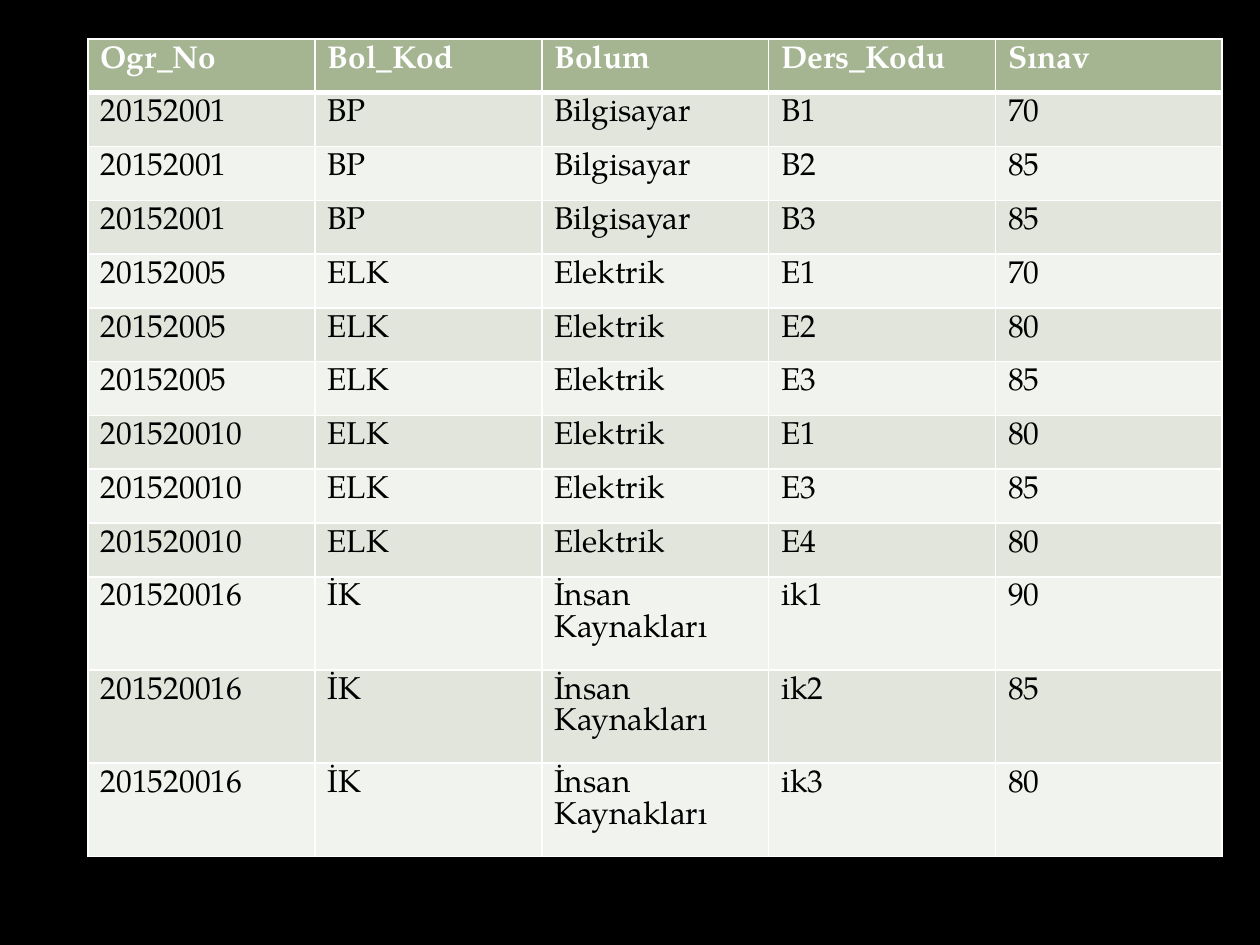
from lxml import etree
from pptx import Presentation
from pptx.dml.color import RGBColor
from pptx.oxml.ns import qn
from pptx.util import Inches, Pt

FONT = "TeX Gyre Pagella"
BLACK, WHITE = "000000", "FFFFFF"
HEADER_GREEN = "A5B592"
BANDS = ("E1E5DC", "F0F3EE")
HEADINGS = ("Ogr_No", "Bol_Kod", "Bolum", "Ders_Kodu", "Sınav")
STUDENTS = (
    ("20152001", "BP", "Bilgisayar", (("B1", 70), ("B2", 85), ("B3", 85))),
    ("20152005", "ELK", "Elektrik", (("E1", 70), ("E2", 80), ("E3", 85))),
    ("201520010", "ELK", "Elektrik", (("E1", 80), ("E3", 85), ("E4", 80))),
    ("201520016", "İK", "İnsan Kaynakları",
     (("ik1", 90), ("ik2", 85), ("ik3", 80))),
)


def paint(fill, color):
    fill.solid()
    fill.fore_color.rgb = RGBColor.from_string(color)


def write(frame, text, size=18, color=BLACK, bold=False):
    run = frame.paragraphs[0].add_run()
    run.text = text
    run.font.name = FONT
    run.font.size = Pt(size)
    run.font.bold = bold
    run.font.color.rgb = RGBColor.from_string(color)


def set_borders(cell, color, **widths):
    properties = cell._tc.get_or_add_tcPr()
    for index, (side, width) in enumerate(widths.items()):
        border = etree.Element(qn(f"a:ln{side}"), w=str(Pt(width)))
        solid = etree.SubElement(border, qn("a:solidFill"))
        etree.SubElement(solid, qn("a:srgbClr"), val=color)
        properties.insert(index, border)


def add_grades(slide, left, top, width, height):
    records = [
        (number, code, department, course, str(grade))
        for number, code, department, results in STUDENTS
        for course, grade in results
    ]
    rows = [HEADINGS, *records]
    grades = slide.shapes.add_table(
        len(rows), len(HEADINGS), left, top, width, height).table
    tall_count = sum(" " in values[2] for values in rows)
    tall_height = Inches(0.74)
    short_height = (height - tall_count * tall_height) // (len(rows) - tall_count)
    for row_index, values in enumerate(rows):
        is_header = row_index == 0
        grades.rows[row_index].height = (
            tall_height if " " in values[2] else short_height)
        background = HEADER_GREEN if is_header else BANDS[(row_index - 1) % 2]
        for column_index, value in enumerate(values):
            cell = grades.cell(row_index, column_index)
            write(cell.text_frame, value, bold=is_header,
                  color=WHITE if is_header else BLACK)
            paint(cell.fill, background)
            set_borders(cell, WHITE, L=1, R=1, T=3 if row_index == 1 else 1,
                        B=3 if is_header else 1)


def main():
    deck = Presentation()
    deck.slide_width, deck.slide_height = Inches(10), Inches(7.5)
    slide = deck.slides.add_slide(deck.slide_layouts[6])
    paint(slide.background.fill, BLACK)
    add_grades(slide, Inches(0.7), Inches(0.31), Inches(9), Inches(6.49))
    deck.save("out.pptx")


if __name__ == "__main__":
    main()
